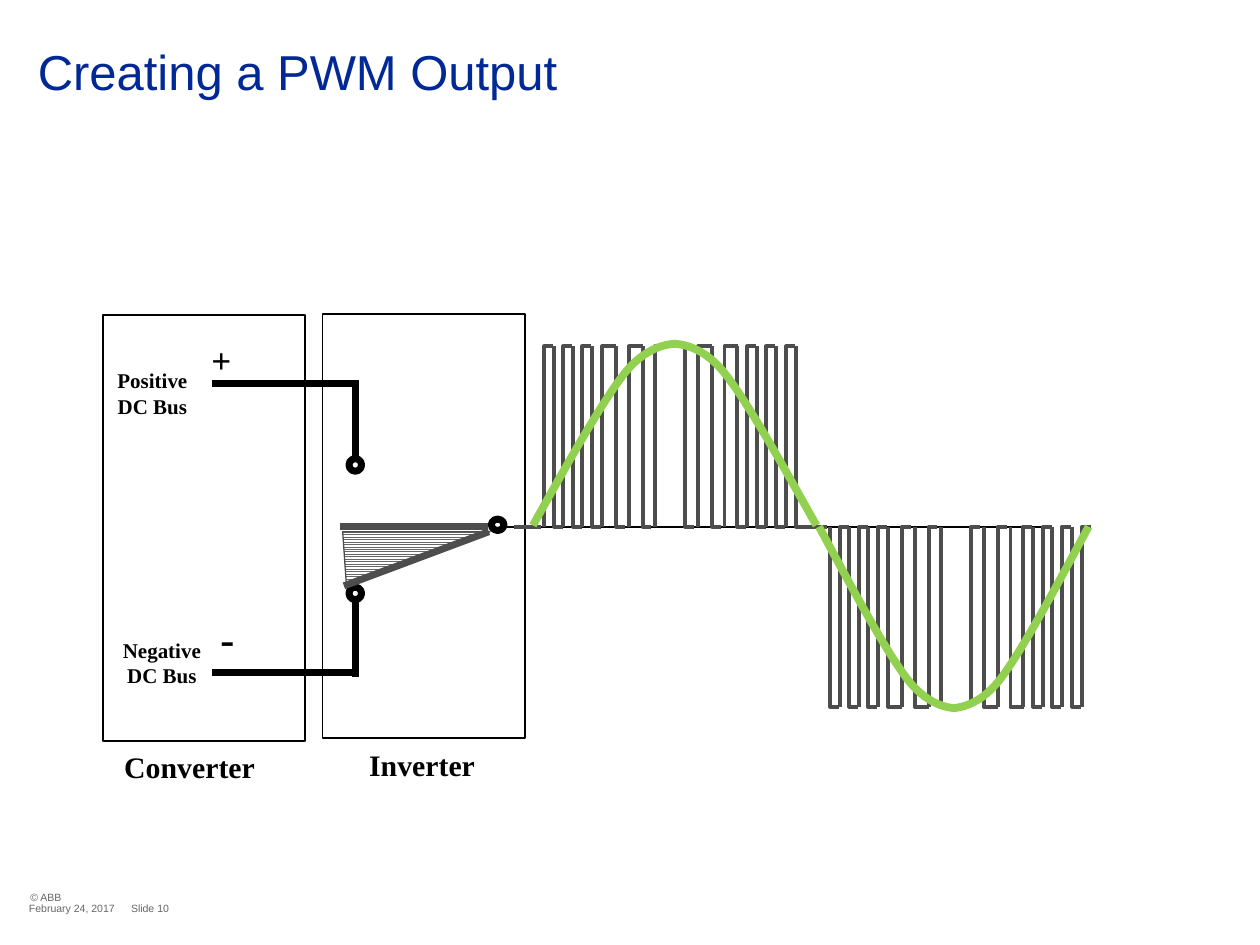
from math import comb
from lxml import etree
from pptx import Presentation
from pptx.dml.color import RGBColor
from pptx.enum import dml, shapes, text
from pptx.oxml.ns import qn
from pptx.util import Inches, Pt

BLACK = RGBColor(0, 0, 0)
WHITE = RGBColor(255, 255, 255)
NAVY = RGBColor(0x00, 0x28, 0x97)
GRAY = RGBColor(0x66, 0x66, 0x66)
DARK = RGBColor(0x4D, 0x4D, 0x4D)
GREEN = RGBColor(0x92, 0xD0, 0x50)
ZERO, PEAK = 4.18, 1.43  # axis height and pulse height

deck = Presentation()
deck.slide_width, deck.slide_height = Inches(10), Inches(7.5)
slide = deck.slides.add_slide(deck.slide_layouts[5])


def write(words, at, size, font="Times New Roman", color=BLACK, bold=True,
          align=text.PP_ALIGN.CENTER, anchor=text.MSO_ANCHOR.TOP,
          inset=(0.1, 0.05, 0.1, 0.05), wrap=False, box=None, space=None):
    box = box or slide.shapes.add_textbox(0, 0, 0, 0)
    box.left, box.top, box.width, box.height = map(Inches, at)
    frame = box.text_frame
    frame.auto_size = text.MSO_AUTO_SIZE.NONE
    frame.word_wrap, frame.vertical_anchor = wrap, anchor
    (frame.margin_left, frame.margin_top,
     frame.margin_right, frame.margin_bottom) = map(Inches, inset)
    frame.text = words
    for para in frame.paragraphs:
        para.alignment, para.line_spacing = align, space
        para.font.size, para.font.name = Pt(size), font
        para.font.bold, para.font.color.rgb = bold, color


def draw(points, color, width, home=slide):
    """Connector for two points, freeform for more."""
    spots = [(Inches(x), Inches(y)) for x, y in points]
    if len(spots) == 2:
        item = home.shapes.add_connector(
            shapes.MSO_CONNECTOR.STRAIGHT, *spots[0], *spots[1])
    else:
        path = home.shapes.build_freeform(*spots[0])
        path.add_line_segments(spots[1:], close=spots[0] == spots[-1])
        item = path.convert_to_shape()
        item.fill.background()
    item.line.color.rgb, item.line.width = color, Pt(width)
    etree.SubElement(item._element.spPr, qn("a:effectLst"))
    return item


# Title
left = text.PP_ALIGN.LEFT
write("Creating a PWM Output", (0.1, 0.04, 9.9, 1.74), 28, font="Arial",
      color=NAVY, bold=False, align=left, inset=(0.2, 0.34, 0.24, 0),
      wrap=True, box=slide.shapes.title, space=0.9)

# Footer
for words, at, anchor in [
        ("© ABB", (0.24, 7.07, 1.22, 0.1), text.MSO_ANCHOR.TOP),
        ("Slide 10", (1.04, 7.15, 0.53, 0.11), text.MSO_ANCHOR.MIDDLE),
        ("February 24, 2017", (0.23, 7.15, 0.79, 0.11),
         text.MSO_ANCHOR.MIDDLE)]:
    write(words, at, 6, font="Arial", color=GRAY, bold=False, align=left,
          anchor=anchor, inset=(0, 0, 0, 0))

# Hatched swing of the switch
swing = draw([(2.72, 4.22), (3.89, 4.22), (2.75, 4.65), (2.72, 4.22)],
             DARK, 0.75)
swing.fill.patterned()
swing.fill.pattern = dml.MSO_PATTERN.NARROW_HORIZONTAL
swing.fill.fore_color.rgb, swing.fill.back_color.rgb = GRAY, WHITE

# DC bus wires and zero axis
for bus, end, pin in [(3.04, 3.02, 3.68), (5.34, 5.37, 4.7)]:
    draw([(2.82, end), (2.82, pin)], BLACK, 4)
    draw([(2.84, bus), (1.68, bus)], BLACK, 4)
draw([(4, ZERO), (8.28, ZERO)], BLACK, 1)

# Contacts, then the two cabinets
for kind, at, width in [("OVAL", (2.77, 3.64, 0.1, 0.1), 4),
                        ("OVAL", (2.77, 4.66, 0.1, 0.1), 4),
                        ("OVAL", (3.9, 4.12, 0.1, 0.09), 4),
                        ("RECTANGLE", (0.82, 2.5, 1.6, 3.38), 1),
                        ("RECTANGLE", (2.56, 2.49, 1.61, 3.37), 1)]:
    part = slide.shapes.add_shape(shapes.MSO_SHAPE[kind], *map(Inches, at))
    part.shadow.inherit = False
    part.line.color.rgb, part.line.width = BLACK, Pt(width)
    if kind == "OVAL":
        part.fill.solid()
        part.fill.fore_color.rgb = WHITE
    else:
        part.fill.background()

# Labels
write("Converter", (0.84, 5.89, 1.33, 0.39), 17)
write("Inverter", (2.81, 5.88, 1.08, 0.39), 17)
write("Positive\nDC Bus", (0.79, 2.87, 0.84, 0.49), 12)
write("Negative\nDC Bus", (0.84, 5.01, 0.89, 0.49), 12)
write("+", (1.58, 2.64, 0.36, 0.43), 20, align=left)
write("-", (1.65, 4.81, 0.31, 0.49), 24, align=left)

# PWM pulses: rise, width of the flat top, fall
pulses = [(4.32, 0.07, 4.4), (4.47, 0.07, 4.55), (4.62, 0.07, 4.7),
          (4.78, 0.11, 4.89), (4.99, 0.11, 5.1), (5.2, 0.21, 5.44),
          (5.54, 0.11, 5.65), (5.75, 0.11, 5.85), (5.93, 0.07, 6.01),
          (6.08, 0.07, 6.16), (6.24, 0.07, 6.32)]
for shift, top in [(0, ZERO - PEAK), (2.27, ZERO + PEAK)]:
    half = slide.shapes.add_group_shape()
    draw([(4.08 + shift, ZERO), (4.29 + shift, ZERO)], DARK, 2.25, half)
    for rise, flat, fall in pulses:
        up, down = rise + shift, fall + shift
        draw([(up, ZERO), (up, top), (up + flat, top)], DARK, 2.25, half)
        draw([(down, top), (down, ZERO), (down + 0.07, ZERO)],
             DARK, 2.25, half)

# Switch blade in both positions
draw([(2.7, ZERO), (3.87, ZERO)], DARK, 4)
draw([(3.88, 4.22), (2.73, 4.65)], DARK, 4)

# Sine wave: one quarter of two Bezier pieces, mirrored four ways
pieces = [[(0, 0), (0.27, 0.48), (0.54, 0.97), (0.73, 1.21)],
          [(0.73, 1.21), (0.92, 1.45), (1.13, 1.44), (1.13, 1.44)]]
steps = 16
quarter = [tuple(sum(comb(3, k) * (n / steps) ** k * (1 - n / steps) ** (3 - k)
                     * knot[axis] for k, knot in enumerate(piece))
                 for axis in (0, 1))
           for piece in pieces for n in range(steps + 1)]
for start, base, wide, tall in [(4.23, 4.17, 1, -1), (6.48, 4.17, -1, -1),
                                (6.5, 4.18, 0.96, 1), (8.64, 4.18, -0.96, 1)]:
    draw([(start + wide * x, base + tall * y) for x, y in quarter], GREEN, 4.5)

deck.save("out.pptx")
